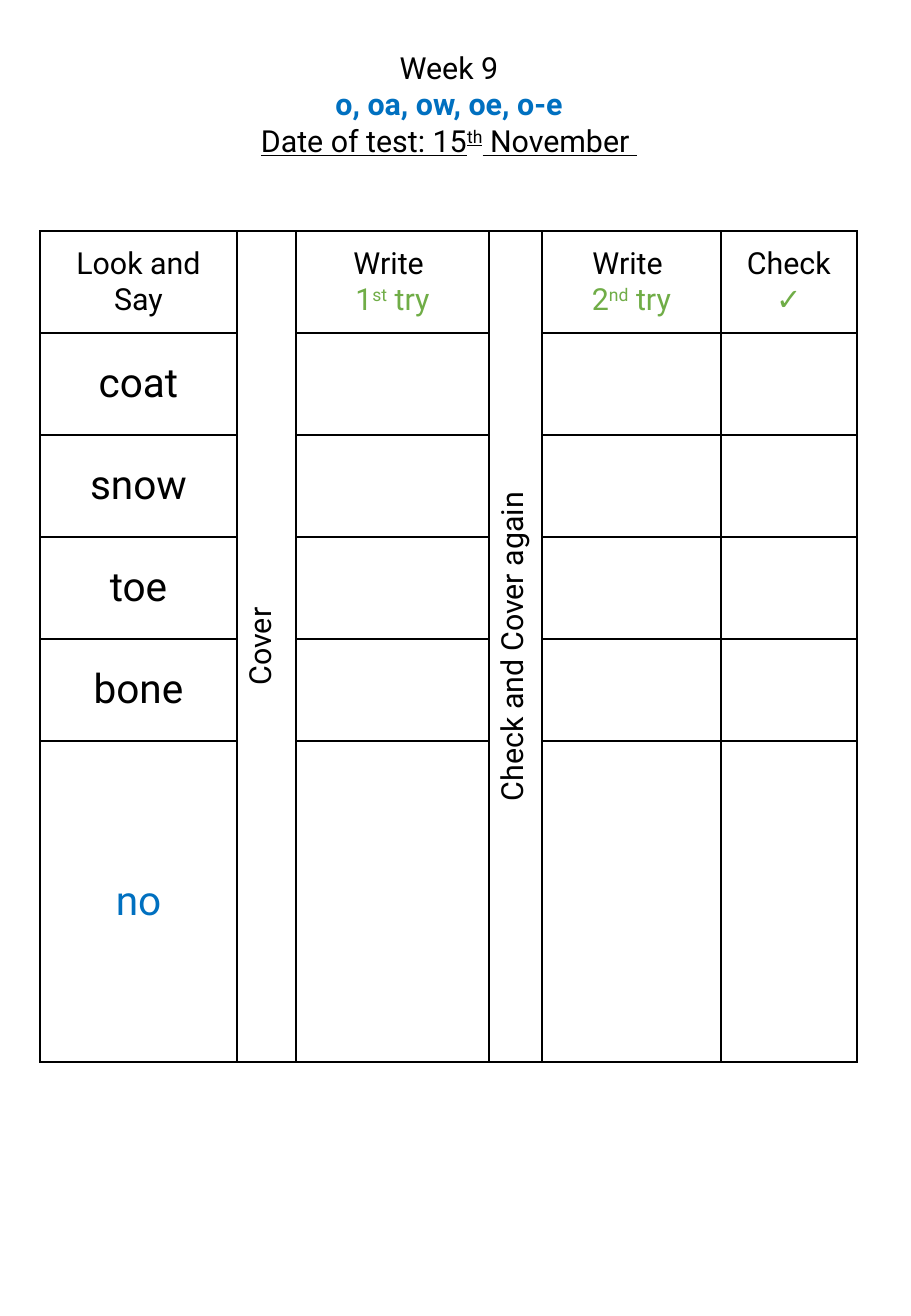
import pptx
import pptx.dml.color
import pptx.enum.text
import pptx.oxml
import pptx.oxml.ns
import pptx.util

COLORS = {"black": "000000", "blue": "0070C0", "green": "70AD47", "white": "FFFFFF"}
COLUMN_WIDTHS = [197, 59, 193, 53, 179, 136]
ROW_HEIGHT = 102
WORDS = ["coat", "snow", "toe", "bone", "no"]
TITLE = [
    [("Week 9", {})],
    [("o, oa, ow, oe, o-e", {"color": "blue", "bold": True})],
    [
        ("Date of test: 15", {"underline": True}),
        ("th", {"underline": True, "raised": True}),
        (" November ", {"underline": True}),
    ],
]


class SpellingSheet:
    """Draws a weekly spelling sheet on one slide in a single text style."""

    font = "Roboto"
    scale = 7526

    def __init__(self, presentation):
        presentation.slide_width = self.px(911)
        presentation.slide_height = self.px(1316)
        self.slide = presentation.slides.add_slide(presentation.slide_layouts[5])

    def px(self, length):
        return pptx.util.Emu(length * self.scale)

    def rgb(self, color):
        return pptx.dml.color.RGBColor.from_string(COLORS[color])

    def format_run(self, run, size=18, color="black", bold=False, underline=False, raised=False):
        run.font.name = self.font
        run.font.size = pptx.util.Pt(size)
        run.font.bold = bold
        run.font.underline = underline
        run.font.color.rgb = self.rgb(color)
        if raised:
            run._r.get_or_add_rPr().set("baseline", "30000")

    def fill_text(self, text_frame, lines):
        text_frame.text = "\n".join("" for _ in lines)
        for paragraph, pieces in zip(text_frame.paragraphs, lines):
            paragraph.alignment = pptx.enum.text.PP_ALIGN.CENTER
            for text, style in pieces:
                run = paragraph.add_run()
                run.text = text
                self.format_run(run, **style)

    def title(self, left, top, width, height, lines):
        shape = self.slide.shapes.title
        shape.left, shape.top = self.px(left), self.px(top)
        shape.width, shape.height = self.px(width), self.px(height)
        text_frame = shape.text_frame
        text_frame.word_wrap = True
        text_frame.auto_size = pptx.enum.text.MSO_AUTO_SIZE.SHAPE_TO_FIT_TEXT
        text_frame.vertical_anchor = pptx.enum.text.MSO_ANCHOR.TOP
        self.fill_text(text_frame, lines)

    def table(self, left, top, column_widths, row_count):
        frame = self.slide.shapes.add_table(
            row_count, len(column_widths), self.px(left), self.px(top),
            self.px(sum(column_widths)), self.px(ROW_HEIGHT * row_count))
        table = frame.table
        table.first_row = table.horz_banding = False
        for column, width in zip(table.columns, column_widths):
            column.width = self.px(width)
        for cell in table.iter_cells():
            cell.fill.solid()
            cell.fill.fore_color.rgb = self.rgb("white")
            cell.vertical_anchor = pptx.enum.text.MSO_ANCHOR.MIDDLE
            self.borders(cell)
        return table

    def borders(self, cell):
        properties = cell._tc.get_or_add_tcPr()
        for index, side in enumerate(("lnL", "lnR", "lnT", "lnB")):
            properties.insert(index, pptx.oxml.parse_xml(
                f'<a:{side} {pptx.oxml.ns.nsdecls("a")} w="12700"><a:solidFill>'
                f'<a:srgbClr val="{COLORS["black"]}"/></a:solidFill></a:{side}>'))

    def upright_column(self, table, column, text):
        cell = table.cell(0, column)
        cell.merge(table.cell(len(table.rows) - 1, column))
        cell._tc.get_or_add_tcPr().set("vert", "vert270")
        self.fill_text(cell.text_frame, [[(text, {})]])


def attempt(number, suffix):
    green = {"color": "green"}
    return [
        [("Write ", {})],
        [(number, green), (suffix, {"color": "green", "raised": True}), (" try", green)],
    ]


def main():
    presentation = pptx.Presentation()
    sheet = SpellingSheet(presentation)
    sheet.title(40, 43, 818, 123, TITLE)
    table = sheet.table(40, 231, COLUMN_WIDTHS, len(WORDS) + 1)
    headings = {
        0: [[("Look and Say", {})]],
        2: attempt("1", "st"),
        4: attempt("2", "nd"),
        5: [[("Check", {})], [("✓", {"color": "green"})]],
    }
    for column, lines in headings.items():
        sheet.fill_text(table.cell(0, column).text_frame, lines)
    for row, word in enumerate(WORDS, start=1):
        color = "blue" if word == "no" else "black"
        sheet.fill_text(table.cell(row, 0).text_frame, [[(word, {"size": 24, "color": color})]])
    sheet.upright_column(table, 1, "Cover")
    sheet.upright_column(table, 3, "Check and Cover again")
    presentation.save("out.pptx")


if __name__ == "__main__":
    main()
